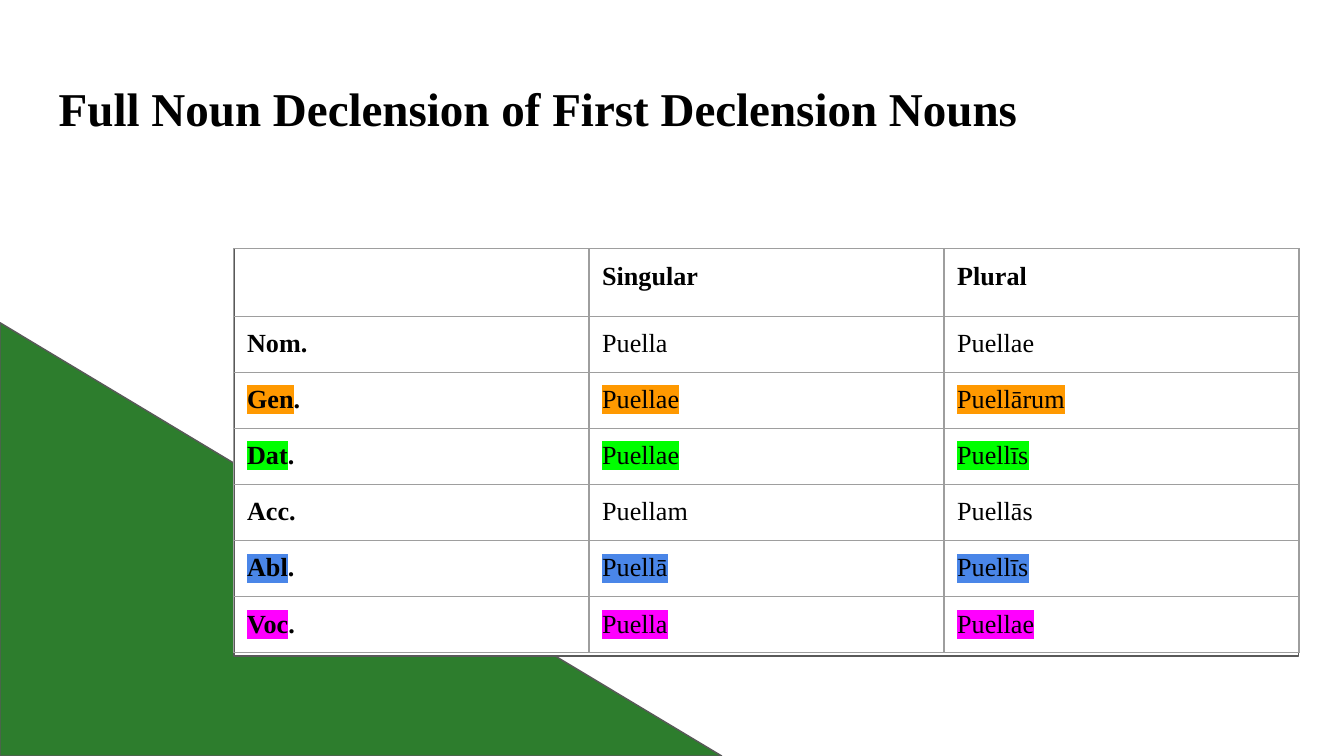
import pptx
import pptx.util
import pptx.dml.color
import pptx.enum.shapes
import pptx.enum.text
import pptx.oxml
import pptx.oxml.ns

Cm, Pt = pptx.util.Cm, pptx.util.Pt
MSO_SHAPE = pptx.enum.shapes.MSO_SHAPE
NS = pptx.oxml.ns.nsdecls("a")


def rgb(value):
    return pptx.dml.color.RGBColor.from_string(value)


def add_text(p, text, size=14, bold=False, highlight=None):
    r = p.add_run()
    r.text = text
    r.font.size = Pt(size)
    r.font.bold = bold
    r.font.color.rgb = rgb("000000")
    r.font.name = "Times New Roman"
    if highlight:
        latin = r.font._element.find(pptx.oxml.ns.qn("a:latin"))
        latin.addprevious(pptx.oxml.parse_xml(
            f'<a:highlight {NS}><a:srgbClr val="{highlight}"/></a:highlight>'))


prs = pptx.Presentation()
prs.slide_width, prs.slide_height = Cm(25.4), Cm(14.29)
s = prs.slides.add_slide(prs.slide_layouts[5])

for kind, fill, box in [
    (MSO_SHAPE.RIGHT_TRIANGLE, "2D7D2D", (0, 6.1, 13.64, 8.19)),
    (MSO_SHAPE.RECTANGLE, "FFFFFF", (4.42, 4.7, 20.12, 7.7)),
]:
    sp = s.shapes.add_shape(kind, *[Cm(v) for v in box])
    sp.shadow.inherit = False
    sp.fill.solid()
    sp.fill.fore_color.rgb = rgb(fill)
    sp.line.color.rgb = rgb("595959")
    sp.line.width = Pt(0.75)

title = s.shapes.title
title.left, title.top, title.width, title.height = Cm(0.86), Cm(1.24), Cm(23.67), Cm(1.6)
tf = title.text_frame
tf.word_wrap = True
tf.auto_size = pptx.enum.text.MSO_AUTO_SIZE.NONE
tf.vertical_anchor = pptx.enum.text.MSO_ANCHOR.MIDDLE
tf.margin_left = tf.margin_right = tf.margin_top = tf.margin_bottom = Cm(0.25)
p = tf.paragraphs[0]
p.alignment = pptx.enum.text.PP_ALIGN.LEFT
add_text(p, "Full Noun Declension of First Declension Nouns", size=25.2, bold=True)

rows = [
    ("", "Singular", "Plural", None),
    ("Nom.", "Puella", "Puellae", None),
    ("Gen.", "Puellae", "Puellārum", "FF9900"),
    ("Dat.", "Puellae", "Puellīs", "00FF00"),
    ("Acc.", "Puellam", "Puellās", None),
    ("Abl.", "Puellā", "Puellīs", "4A86E8"),
    ("Voc.", "Puella", "Puellae", "FF00FF"),
]
table = s.shapes.add_table(len(rows), 3, Cm(4.42), Cm(4.7), Cm(20.12), Cm(7.42)).table
table.first_row = table.horz_banding = False
for col in table.columns:
    col.width = Cm(6.71)

for i, (*words, highlight) in enumerate(rows):
    table.rows[i].height = Cm(1.06)
    for j, word in enumerate(words):
        cell = table.cell(i, j)
        cell.margin_left = cell.margin_right = Cm(0.25)
        cell.margin_top = cell.margin_bottom = Cm(0.25)
        cell.fill.background()
        tcPr = cell._tc.get_or_add_tcPr()
        for k, side in enumerate("LRTB"):
            tcPr.insert(k, pptx.oxml.parse_xml(
                f'<a:ln{side} {NS} w="9525"><a:solidFill><a:srgbClr val="9E9E9E"/>'
                f'</a:solidFill></a:ln{side}>'))
        p = cell.text_frame.paragraphs[0]
        if j == 0 and highlight:
            add_text(p, word[:-1], bold=True, highlight=highlight)
            add_text(p, ".", bold=True)
        elif word:
            add_text(p, word, bold=i == 0 or j == 0, highlight=highlight)

prs.save("out.pptx")
